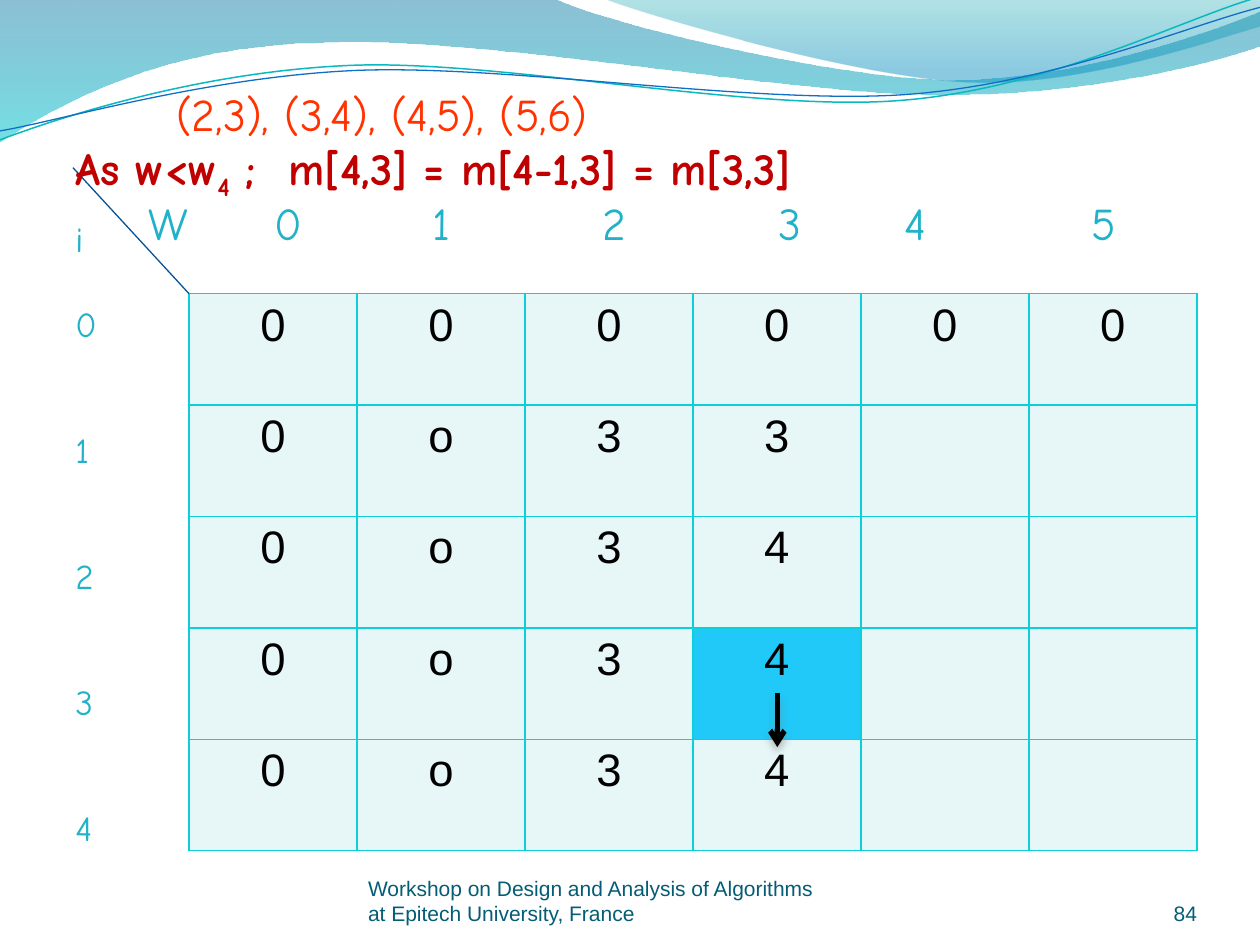
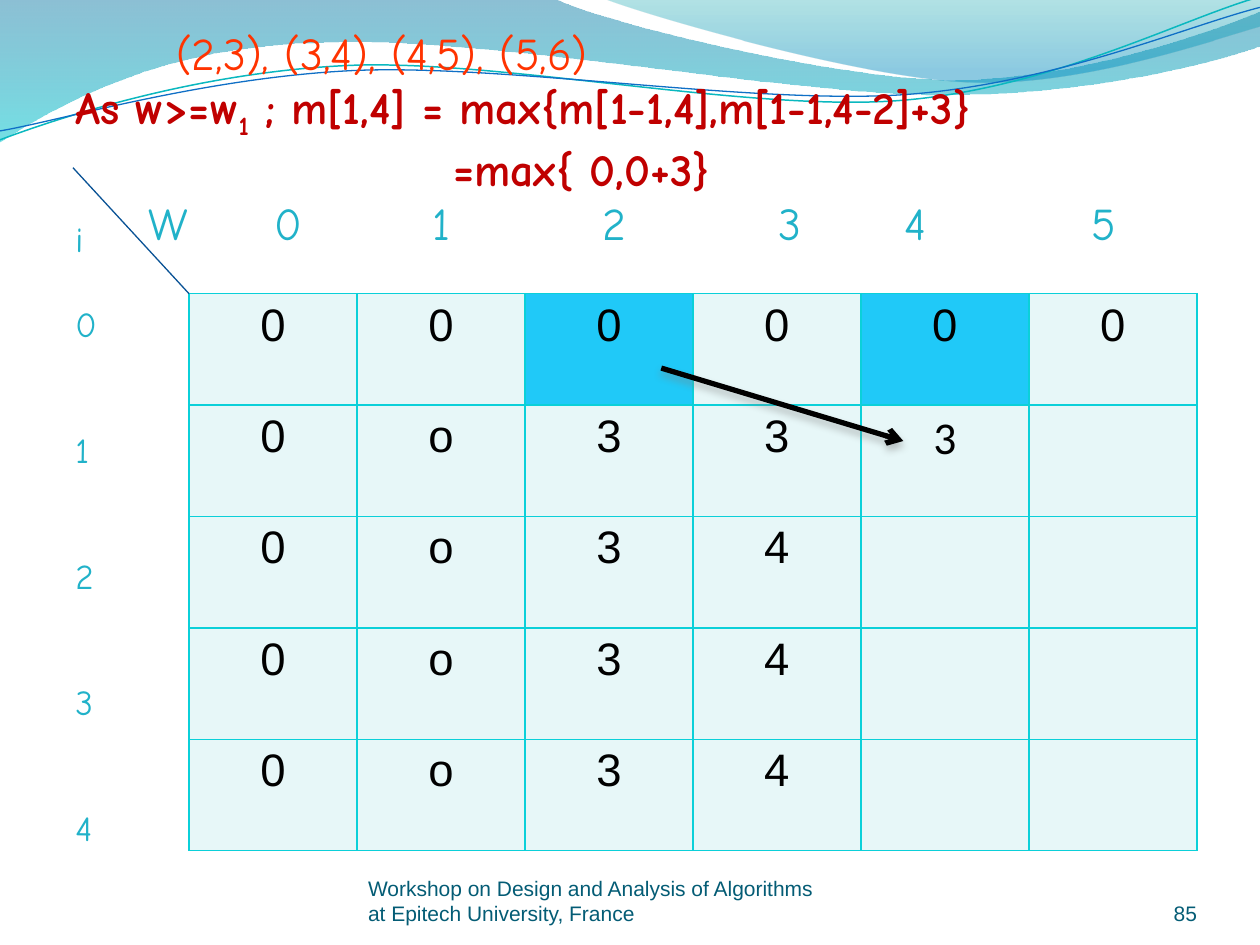
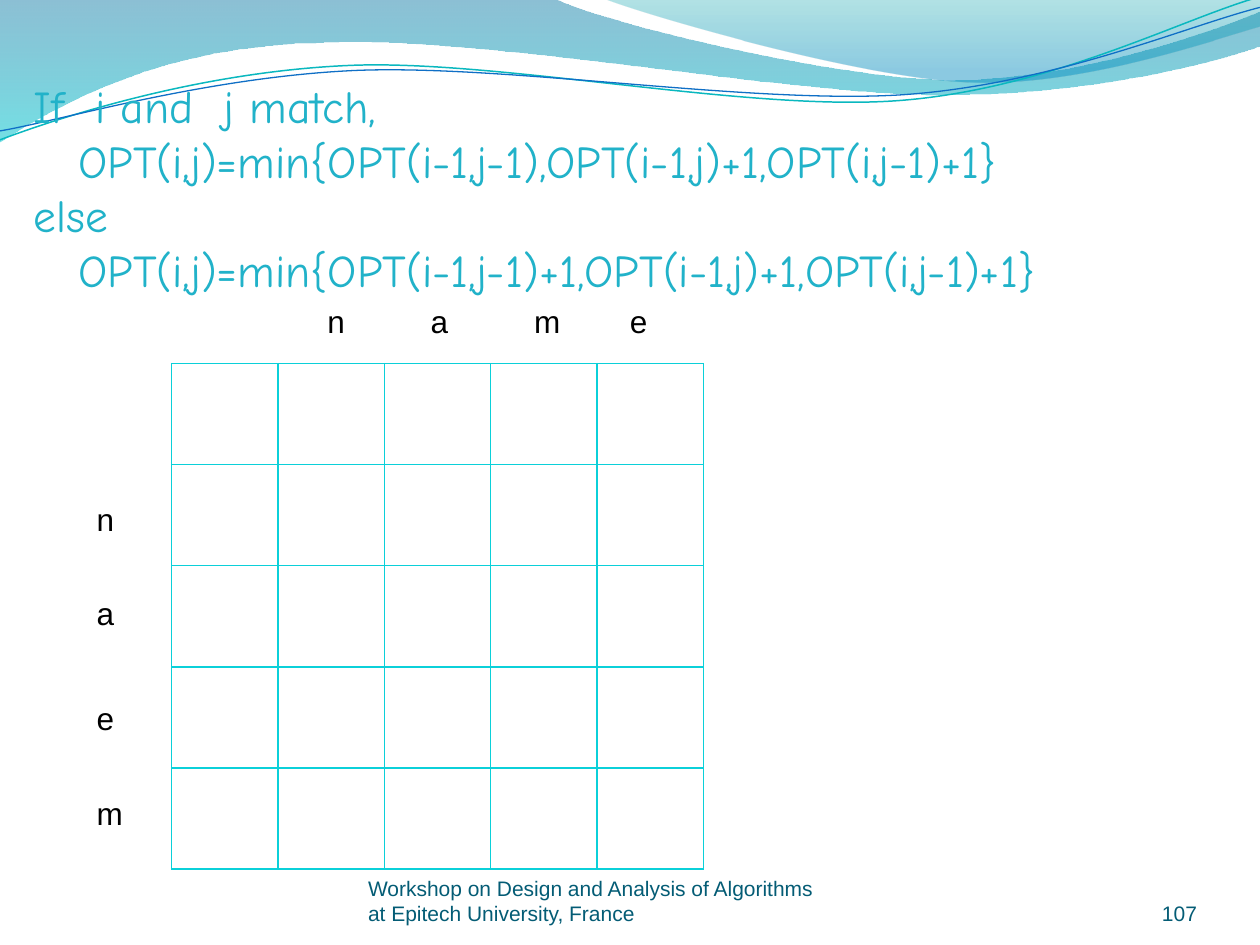
from dataclasses import dataclass

from lxml import etree
from pptx import Presentation
from pptx.dml.color import RGBColor
from pptx.enum.shapes import MSO_CONNECTOR
from pptx.enum.text import MSO_ANCHOR, PP_ALIGN
from pptx.oxml.ns import qn
from pptx.util import Cm, Pt

CENTER, RIGHT = PP_ALIGN.CENTER, PP_ALIGN.RIGHT
TOP, BOTTOM = MSO_ANCHOR.TOP, MSO_ANCHOR.BOTTOM
STRAIGHT = MSO_CONNECTOR.STRAIGHT


@dataclass(frozen=True)
class Theme:
    ink: str = "000000"
    teal: str = "21B2C9"
    orange: str = "FF3300"
    red: str = "C00000"
    footer: str = "045C75"
    grid: str = "0BD0D9"
    cell: str = "E7F7F8"
    marked: str = "20C9F8"
    diagonal: str = "095295"
    shadow: str = "808080"
    plain: str = "Arial"
    hand: str = "Comic Neue"
    alternate: str = "Calibri"
    large: int = 26
    medium: int = 20
    label: int = 18
    small: int = 12


@dataclass(frozen=True)
class Box:
    left: float
    top: float
    width: float
    height: float

    def lengths(self):
        return Cm(self.left), Cm(self.top), Cm(self.width), Cm(self.height)

    def inside(self, left, top, width, height):
        return Box(self.left + left, self.top + top, width, height)


THEME = Theme()
PAGE = Box(0, 0, 25.4, 19.05)
KNAPSACK_BOX = Box(3.81, 5.92, 20.32, 11.23)
EDIT_BOX = Box(3.46, 7.33, 10.72, 10.19)
FOOTER_TEXT = "Workshop on Design and Analysis of Algorithms at Epitech University, France"
ITEMS = "(2,3), (3,4), (4,5), (5,6)"

BANDS = [
    ([(0, -0.03), (11.18, -0.03),
      (12.09, 0.43, 16.87, 1.6, 19.25, 1.6),
      (21.67, 1.6, 24.33, 0.66, 25.4, 0.23), (25.43, 0.91),
      (24.97, 1.12, 22.1, 1.93, 18.95, 1.91),
      (15.8, 1.91, 9.7, 0.71, 6.53, 0.86),
      (3.28, 0.89, 1.17, 2.11, -0.03, 2.87)],
     [(0, "0074A1", 45), (1, "00C6CF", 55)]),
    ([(12.17, -0.03),
      (12.93, 0.28, 17.32, 1.57, 19.53, 1.65),
      (21.74, 1.75, 24.41, 0.81, 25.4, 0.53), (25.4, 0)],
     [(0, "00A1A9", 30), (0.8, "008BBF", 45)]),
]
WAVES = [
    ([(0, 2.82),
      (1.22, 2.36, 4.01, 1.45, 7.04, 1.32),
      (10.03, 1.19, 15.06, 2.26, 18.11, 2.03),
      (21.16, 1.8, 23.83, 0.38, 25.35, -0.05)], "0AB8BF", 0.85),
    ([(0, 2.64),
      (1.19, 2.44, 4.17, 1.55, 7.19, 1.42),
      (10.24, 1.3, 15.16, 2.11, 18.21, 1.91),
      (21.23, 1.7, 23.9, 0.53, 25.4, 0.15)], "0F6FC6", 0.75),
]


def rgb(value):
    return RGBColor.from_string(value)


def add_child(parent, tag, **attributes):
    values = {name: str(value) for name, value in attributes.items()}
    return etree.SubElement(parent, qn(tag), values)


def add_frame(page, box, anchor=TOP, inset=True):
    frame = page.shapes.add_textbox(*box.lengths()).text_frame
    frame.word_wrap = True
    frame.vertical_anchor = anchor
    if not inset:
        frame.margin_left = frame.margin_right = 0
        frame.margin_top = frame.margin_bottom = 0
    return frame


def write(para, text, *, size, color=THEME.ink, font=THEME.plain, bold=False,
          baseline=0, align=None, before=0, indent=0, tabs=()):
    properties = para._p.get_or_add_pPr()
    if tabs:
        tab_list = add_child(properties, "a:tabLst")
        for stop in tabs:
            add_child(tab_list, "a:tab", pos=Cm(stop), algn="l")
    if indent:
        properties.set("marL", str(Cm(indent)))
        properties.set("indent", "0")
    if before:
        para.space_before = Pt(before)
    if align is not None:
        para.alignment = align
    span = para.add_run()
    span.text = text
    span.font.size = Pt(size)
    span.font.name = font
    span.font.bold = bold
    span.font.color.rgb = rgb(color)
    if baseline:
        span._r.get_or_add_rPr().set("baseline", str(baseline * 1000))


def add_outline(page, segments, close):
    points = [(Cm(x), Cm(y)) for segment in segments
              for x, y in zip(segment[::2], segment[1::2])]
    builder = page.shapes.build_freeform(*points[0])
    builder.add_line_segments(points[1:], close=close)
    shape = builder.convert_to_shape()
    shape.shadow.inherit = False
    steps = shape._element.spPr.iter(qn("a:lnTo"))
    steps = iter(list(steps))
    for segment in segments[1:]:
        step = next(steps)
        if len(segment) == 6:
            curve = etree.Element(qn("a:cubicBezTo"))
            step.addprevious(curve)
            for part in (step, next(steps), next(steps)):
                curve.append(part[0])
                part.getparent().remove(part)
    return shape


def add_waves(page):
    for segments, stops in BANDS:
        band = add_outline(page, segments, True)
        band.line.fill.background()
        band.fill.gradient()
        band.fill.gradient_angle = 270
        for stop, (position, color, _) in zip(band.fill.gradient_stops, stops):
            stop.position = position
            stop.color.rgb = rgb(color)
        tints = band._element.spPr.iter(qn("a:srgbClr"))
        for tint, (_, _, opacity) in zip(tints, stops):
            add_child(tint, "a:alpha", val=opacity * 1000)
    for segments, color, weight in WAVES:
        wave = add_outline(page, segments, False)
        wave.fill.background()
        wave.line.color.rgb = rgb(color)
        wave.line.width = Pt(weight)


def add_footer(page, box, number):
    style = dict(size=THEME.small, color=THEME.footer)
    frame = add_frame(page, box.inside(7.42, 17.65, 9.32, 1.02), BOTTOM, False)
    write(frame.paragraphs[0], FOOTER_TEXT, **style)
    frame = add_frame(page, box.inside(22.01, 17.65, 2.12, 1.02), BOTTOM, False)
    write(frame.paragraphs[0], str(number), align=RIGHT, **style)


def start_page(deck, number):
    page = deck.slides.add_slide(deck.slide_layouts[6])
    add_waves(page)
    add_footer(page, PAGE, number)
    return page


def add_line(page, box, start, end, color, weight, arrow=False):
    ends = [Cm(value) for x, y in (start, end) for value in (box.left + x, box.top + y)]
    line = page.shapes.add_connector(STRAIGHT, *ends)
    line.line.color.rgb = rgb(color)
    line.line.width = Pt(weight)
    effects = add_child(line._element.spPr, "a:effectLst")
    if arrow:
        add_child(line.line._get_or_add_ln(), "a:tailEnd", type="arrow")
        shadow = add_child(effects, "a:outerShdw", blurRad=Pt(4.5), dist=Pt(3),
                           dir=90 * 60000, rotWithShape=0)
        tint = add_child(shadow, "a:srgbClr", val=THEME.shadow)
        add_child(tint, "a:alpha", val=48000)


def set_borders(cell):
    properties = cell._tc.get_or_add_tcPr()
    for index, side in enumerate(("a:lnL", "a:lnR", "a:lnT", "a:lnB")):
        border = etree.Element(qn(side), {"w": str(Pt(1))})
        fill = add_child(border, "a:solidFill")
        add_child(fill, "a:srgbClr", val=THEME.grid)
        properties.insert(index, border)


def add_grid(page, box, rows, fill=None, marked=(), fonts=None):
    table = page.shapes.add_table(len(rows), len(rows[0]), *box.lengths()).table
    table.first_row = table.horz_banding = False
    for column in table.columns:
        column.width = Cm(box.width / len(rows[0]))
    for row in table.rows:
        row.height = Cm(box.height / len(rows))
    for y, values in enumerate(rows):
        for x, value in enumerate(values):
            cell = table.cell(y, x)
            if fill:
                cell.fill.solid()
                cell.fill.fore_color.rgb = rgb(THEME.marked if (y, x) in marked else fill)
            else:
                cell.fill.background()
            set_borders(cell)
            if value.strip():
                font = (fonts or {}).get((y, x), THEME.plain)
                write(cell.text_frame.paragraphs[0], value, size=THEME.large,
                      font=font, align=CENTER)


def add_axes(page, box):
    style = dict(color=THEME.teal, font=THEME.hand)
    add_line(page, box, (0, 0), (-2.34, -2.54), THEME.diagonal, 0.75)
    frame = add_frame(page, box.inside(-1.07, -2.12, 21.17, 1.37))
    write(frame.paragraphs[0], "\t".join("W012345"), size=THEME.large,
          tabs=(2.54, 5.72, 9.15, 12.7, 15.24, 19.01), **style)
    frame = add_frame(page, box.inside(-2.54, -1.65, 1.47, 13.08))
    write(frame.paragraphs[0], "i", size=THEME.medium, **style)
    for index in range(5):
        write(frame.add_paragraph(), str(index), size=THEME.medium,
              before=48 if index else 24, **style)


def add_rule(page, box, condition, index, result, second=None):
    frame = add_frame(page, box.inside(2.03, 0, 10.2, 1.37))
    write(frame.paragraphs[0], ITEMS, size=THEME.large, color=THEME.orange, font=THEME.hand)
    style = dict(size=THEME.large, color=THEME.red, font=THEME.hand, bold=True)
    frame = add_frame(page, box.inside(0, 1.09, 24.13, 2.49 if second else 1.37))
    para = frame.paragraphs[0]
    write(para, condition, tabs=(4.3,), **style)
    write(para, index, baseline=-25, **style)
    write(para, result, **style)
    if second:
        write(frame.add_paragraph(), second, indent=7.62, **style)


def build_knapsack(deck, number, rule, rule_top, rows, marked, arrow, fonts=None):
    page = start_page(deck, number)
    add_grid(page, KNAPSACK_BOX, rows, THEME.cell, marked, fonts)
    add_axes(page, KNAPSACK_BOX)
    add_rule(page, PAGE.inside(1.27, rule_top, 24.13, 3.58), *rule)
    add_line(page, KNAPSACK_BOX, *arrow, THEME.ink, 3, arrow=True)


def add_recurrence(page, box):
    lines = [
        ("If\ti and\tj match,", dict(tabs=(1.24, 3.83))),
        ("OPT(i,j)=min{OPT(i-1,j-1),OPT(i-1,j)+1,OPT(i,j-1)+1}", dict(indent=0.9)),
        ("else", {}),
        ("OPT(i,j)=min{OPT(i-1,j-1)+1,OPT(i-1,j)+1,OPT(i,j-1)+1}", dict(indent=0.9)),
    ]
    frame = add_frame(page, box)
    for index, (text, layout) in enumerate(lines):
        para = frame.add_paragraph() if index else frame.paragraphs[0]
        write(para, text, size=THEME.large, color=THEME.teal, font=THEME.hand, **layout)


def add_letters(page, box):
    across = [(letter, x, -1.36) for letter, x in zip("name", (2.89, 4.97, 7.06, 8.99))]
    down = [(letter, -1.76, y) for letter, y in zip("naem", (2.63, 4.53, 6.64, 8.55))]
    for letter, x, y in across + down:
        frame = add_frame(page, box.inside(x, y, 1.2, 1.02))
        write(frame.paragraphs[0], letter, size=THEME.label)


def build_edit_distance(deck, number):
    page = start_page(deck, number)
    add_grid(page, EDIT_BOX, [" " * 5] * 5)
    add_letters(page, EDIT_BOX)
    add_recurrence(page, PAGE.inside(0.43, 1.45, 24.77, 4.7))


def main():
    deck = Presentation()
    deck.slide_width, deck.slide_height = Cm(PAGE.width), Cm(PAGE.height)
    build_knapsack(
        deck, 84, ("As w<w", "4", " ;\tm[4,3] = m[4-1,3] = m[3,3]"), 1.6,
        ["000000", "0o33  ", "0o34  ", "0o34  ", "0o34  "],
        {(3, 3)}, ((11.86, 8.05), (11.86, 9.14)))
    build_knapsack(
        deck, 85,
        ("As w>=w", "1", " ; m[1,4] = max{m[1-1,4],m[1-1,4-2]+3}", "=max{ 0,0+3}"), 0.38,
        ["000000", "0o333 ", "0o34  ", "0o34  ", "0o34  "],
        {(0, 2), (0, 4)}, ((9.52, 1.5), (14.4, 2.97)), {(1, 4): THEME.alternate})
    build_edit_distance(deck, 107)
    deck.save("out.pptx")


if __name__ == "__main__":
    main()
